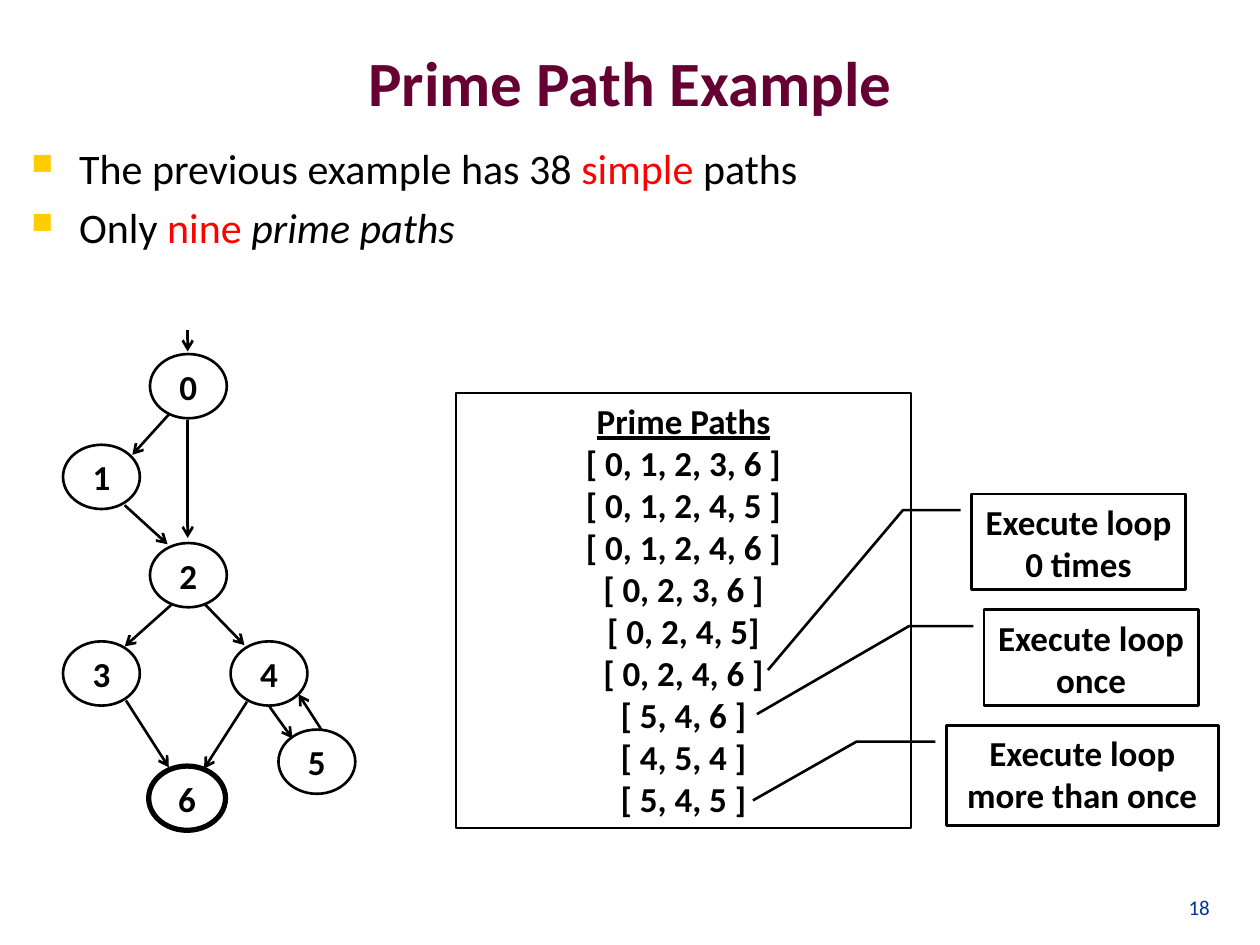
from dataclasses import dataclass

from lxml import etree
from pptx import Presentation
from pptx.dml.color import RGBColor
from pptx.enum.shapes import MSO_CONNECTOR, MSO_SHAPE
from pptx.enum.text import MSO_ANCHOR, PP_ALIGN
from pptx.oxml.ns import qn
from pptx.util import Inches, Pt

LEFT, CENTER, RIGHT = PP_ALIGN.LEFT, PP_ALIGN.CENTER, PP_ALIGN.RIGHT
TOP, MIDDLE, BOTTOM = MSO_ANCHOR.TOP, MSO_ANCHOR.MIDDLE, MSO_ANCHOR.BOTTOM
RECTANGLE, OVAL = MSO_SHAPE.RECTANGLE, MSO_SHAPE.OVAL
CALLOUT, STRAIGHT = MSO_SHAPE.LINE_CALLOUT_2, MSO_CONNECTOR.STRAIGHT


@dataclass(frozen=True)
class Theme:
    font: str = "Calibri"
    ink: str = "000000"
    title: str = "660033"
    accent: str = "FF0000"
    bullet: str = "FFCC00"
    number: str = "003399"
    title_size: int = 36
    body_size: int = 24
    label_size: int = 20
    number_size: int = 12
    line: float = 1.5


THEME = Theme()
NODE_SIZE = (0.61, 0.51)

# Left and top of each graph node
NODES = {
    "0": (1.19, 2.81),
    "1": (0.5, 3.53),
    "2": (1.19, 4.31),
    "3": (0.5, 5.09),
    "4": (1.83, 5.09),
    "5": (2.21, 5.79),
    "6": (1.18, 6.08),
}
FINAL_NODE = "6"

# Start and end point of each graph edge
EDGES = [
    ((1.49, 2.62), (1.49, 2.79)),  # into 0
    ((1.34, 3.29), (1.05, 3.61)),  # 0 to 1
    ((1.49, 3.33), (1.49, 4.27)),  # 0 to 2
    ((0.99, 4.01), (1.33, 4.32)),  # 1 to 2
    ((1.36, 4.8), (0.99, 5.13)),   # 2 to 3
    ((1.63, 4.8), (1.94, 5.12)),   # 2 to 4
    ((1, 5.56), (1.34, 6.09)),     # 3 to 6
    ((1.96, 5.57), (1.62, 6.1)),   # 4 to 6
    ((2.14, 5.61), (2.32, 5.86)),  # 4 to 5
    ((2.55, 5.79), (2.37, 5.51)),  # 5 to 4
]

PRIME_PATHS = [
    "[ 0, 1, 2, 3, 6 ]", "[ 0, 1, 2, 4, 5 ]", "[ 0, 1, 2, 4, 6 ]",
    "[ 0, 2, 3, 6 ]", "[ 0, 2, 4, 5]", "[ 0, 2, 4, 6 ]",
    "[ 5, 4, 6 ]", "[ 4, 5, 4 ]", "[ 5, 4, 5 ]",
]

# Text, place and leader line (y, x pairs as shares of the box)
CALLOUTS = [
    ("Execute loop 0 times", (7.71, 3.92, 1.7, 0.76),
     (0.17, -0.05, 0.17, -0.32, 1.84, -0.95)),
    ("Execute loop once", (7.81, 4.84, 1.7, 0.76),
     (0.17, -0.05, 0.17, -0.35, 1.09, -1.06)),
    ("Execute loop more than once", (7.51, 5.76, 2.16, 0.79),
     (0.16, -0.04, 0.16, -0.33, 0.75, -0.71)),
]


def add_span(para, text, size, color=THEME.ink, bold=False, italic=False,
             underline=False):
    span = para.add_run()
    span.text = text
    font = span.font
    font.name, font.size = THEME.font, Pt(size)
    font.color.rgb = RGBColor.from_string(color)
    font.bold, font.italic, font.underline = bold, italic, underline


def next_para(frame, index, align):
    para = frame.add_paragraph() if index else frame.paragraphs[0]
    para.alignment = align
    return para


def add_box(page, place, anchor):
    frame = page.shapes.add_textbox(*map(Inches, place)).text_frame
    frame.word_wrap = True
    frame.vertical_anchor = anchor
    return frame


def add_line_text(page, place, text, size, color, align, anchor, bold=False):
    frame = add_box(page, place, anchor)
    add_span(next_para(frame, 0, align), text, size, color, bold)


def add_bullets(page, place, items):
    frame = add_box(page, place, TOP)
    for index, spans in enumerate(items):
        para = next_para(frame, index, LEFT)
        if index:
            para.space_before = Pt(0.2 * THEME.body_size)
        props = para._p.get_or_add_pPr()
        props.set("marL", str(Inches(0.38)))
        props.set("indent", str(-Inches(0.38)))
        color = etree.SubElement(props, qn("a:buClr"))
        etree.SubElement(color, qn("a:srgbClr"), val=THEME.bullet)
        etree.SubElement(props, qn("a:buSzPct"), val="70000")
        etree.SubElement(props, qn("a:buChar"), char="■")
        for text, style in spans:
            add_span(para, text, THEME.body_size, **style)


def add_outline(page, kind, place, width=THEME.line, anchor=TOP):
    shape = page.shapes.add_shape(kind, *map(Inches, place))
    shape.shadow.inherit = False
    shape.fill.background()
    shape.line.color.rgb = RGBColor.from_string(THEME.ink)
    shape.line.width = Pt(width)
    shape.text_frame.word_wrap = True
    shape.text_frame.vertical_anchor = anchor
    return shape


def add_label(shape, text):
    para = next_para(shape.text_frame, 0, CENTER)
    add_span(para, text, THEME.label_size, bold=True)


def add_node(page, name, corner):
    width = 3 if name == FINAL_NODE else THEME.line
    node = add_outline(page, OVAL, corner + NODE_SIZE, width, MIDDLE)
    frame = node.text_frame
    frame.margin_left = frame.margin_right = 0
    frame.margin_top = frame.margin_bottom = 0
    add_label(node, name)


def add_edge(page, start, end):
    edge = page.shapes.add_connector(STRAIGHT, *map(Inches, start + end))
    edge.line.color.rgb = RGBColor.from_string(THEME.ink)
    edge.line.width = Pt(THEME.line)
    etree.SubElement(edge.line._get_or_add_ln(), qn("a:tailEnd"), type="arrow")
    etree.SubElement(edge._element.spPr, qn("a:effectLst"))


def add_path_list(page, place):
    frame = add_outline(page, RECTANGLE, place, 1).text_frame
    for index, text in enumerate(["Prime Paths"] + PRIME_PATHS):
        para = next_para(frame, index, CENTER)
        add_span(para, text, THEME.label_size, bold=True, underline=index == 0)


def add_callout(page, text, place, leader):
    callout = add_outline(page, CALLOUT, place)
    for index, share in enumerate(leader):
        callout.adjustments[index] = share
    add_label(callout, text)


def main():
    deck = Presentation()
    deck.slide_width, deck.slide_height = Inches(10), Inches(7.5)
    page = deck.slides.add_slide(deck.slide_layouts[6])

    # Title, bullets and page number
    add_line_text(page, (0.5, 0.02, 9, 1.25), "Prime Path Example",
                  THEME.title_size, THEME.title, CENTER, MIDDLE, bold=True)
    accent = {"color": THEME.accent}
    add_bullets(page, (0.15, 1.08, 9.7, 5.66), [
        [("The previous example has 38 ", {}), ("simple ", accent),
         ("paths", {})],
        [("Only ", {}), ("nine ", accent), ("prime paths", {"italic": True})],
    ])
    add_line_text(page, (9.01, 6.83, 0.69, 0.52), "18",
                  THEME.number_size, THEME.number, RIGHT, BOTTOM)

    # Control flow graph
    for name, corner in NODES.items():
        add_node(page, name, corner)
    for start, end in EDGES:
        add_edge(page, start, end)

    # Prime paths and their callouts
    add_path_list(page, (3.62, 3.12, 3.61, 3.45))
    for text, place, leader in CALLOUTS:
        add_callout(page, text, place, leader)

    deck.save("out.pptx")


if __name__ == "__main__":
    main()
